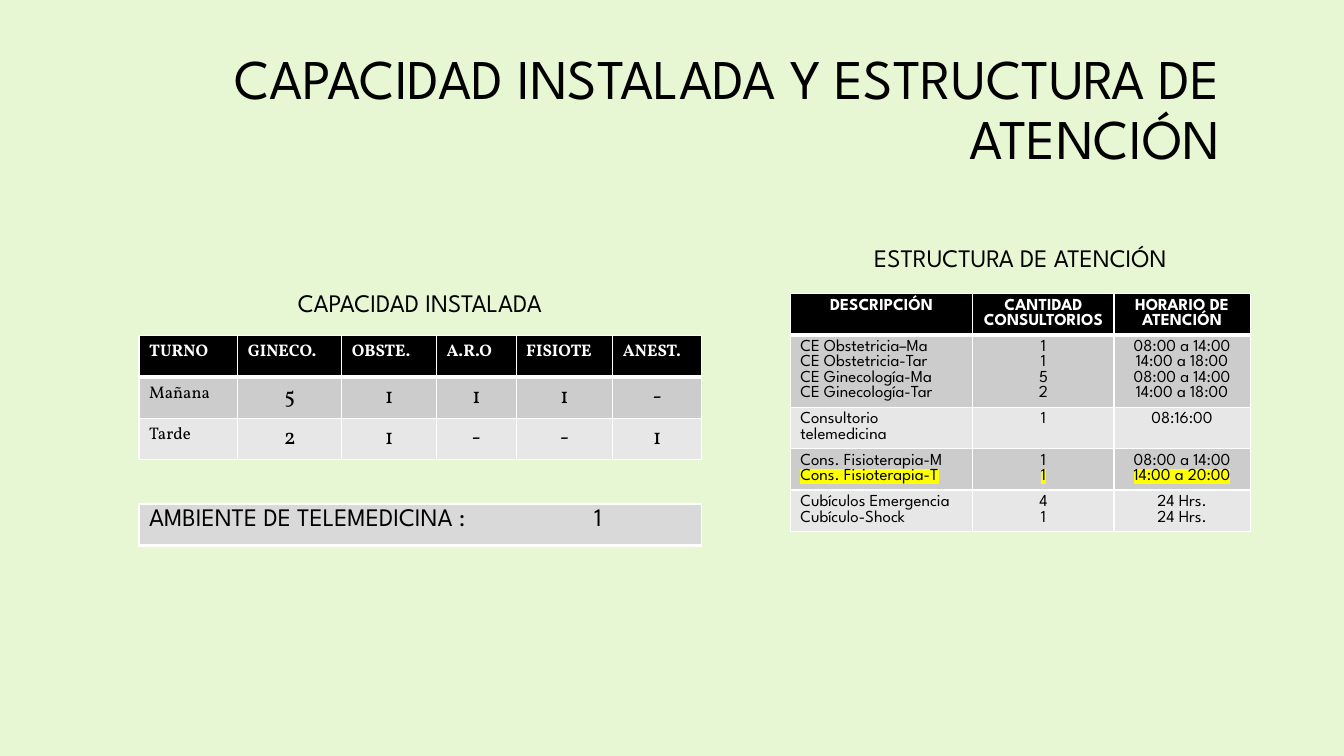
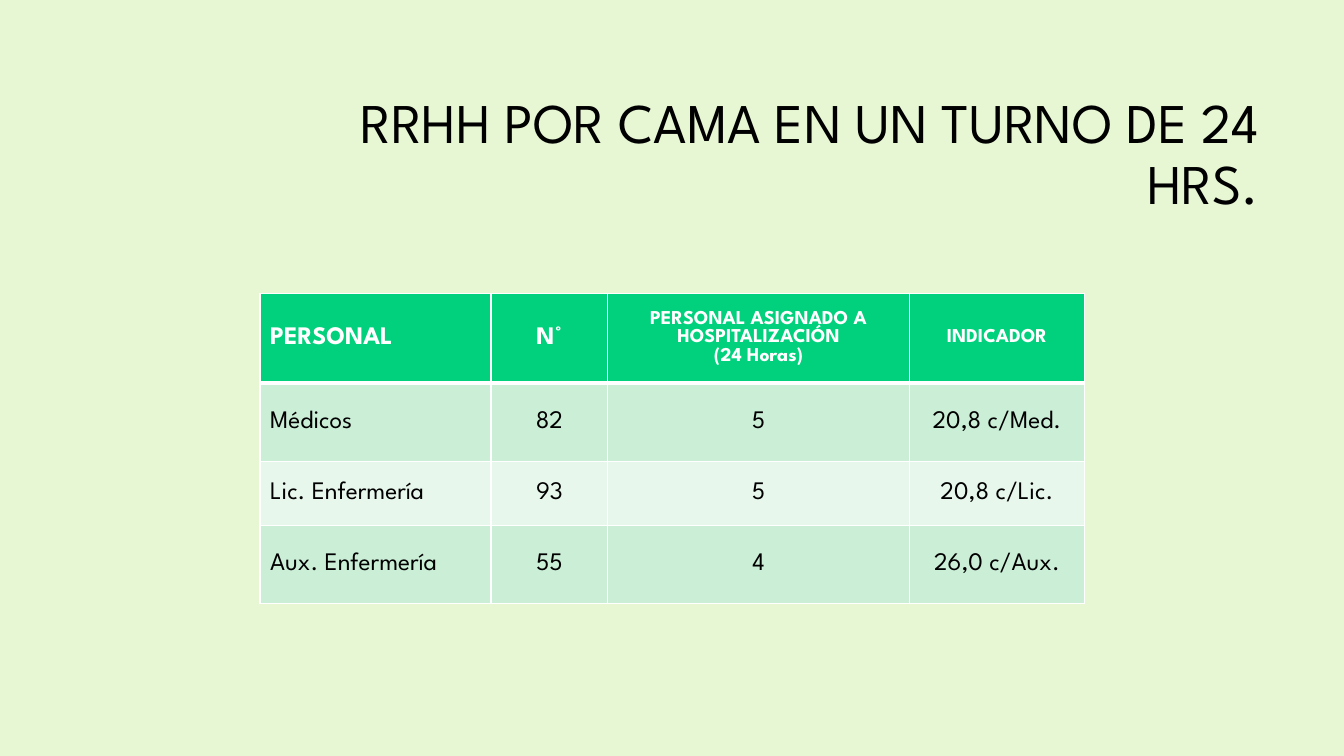
from dataclasses import dataclass
from typing import NamedTuple

from lxml.etree import SubElement
from pptx import Presentation
from pptx.dml.color import RGBColor
from pptx.enum.text import MSO_ANCHOR, MSO_AUTO_SIZE, PP_ALIGN
from pptx.oxml.ns import qn
from pptx.util import Inches, Pt

WIDE, HIGH = Inches(13.33), Inches(7.5)
SANS, SERIF = "League Spartan", "Vollkorn"
PAPER, BLACK, WHITE, GOLD = "E7F6D3", "000000", "FFFFFF", "FFFF00"
GREYS = ("CCCCCC", "E7E7E7")
GREENS = ("CBEED7", "E7F7EC")
ALIGN = {"l": PP_ALIGN.LEFT, "c": PP_ALIGN.CENTER, "r": PP_ALIGN.RIGHT}
ROW = 5.47


class Box(NamedTuple):
    left: float
    top: float
    width: float
    height: float


@dataclass
class Label:
    text: str
    box: Box


@dataclass
class Grid:
    left: float
    top: float
    cols: tuple[float, ...]
    rows: tuple[float, ...]
    cells: list[tuple[str, ...]]
    heads: str
    head: tuple[int, ...]
    body: tuple[int, ...]
    fill: str = BLACK
    ink: str = WHITE
    bands: tuple[str, str] = GREYS
    font: str = SANS
    rule: int = 3
    anchor: MSO_ANCHOR = MSO_ANCHOR.TOP
    mark: tuple[int, int] | None = None
    tab: float = 0


@dataclass
class Page:
    title: str
    box: Box
    labels: list[Label]
    grids: list[Grid]


def hue(code: str) -> RGBColor:
    return RGBColor.from_string(code)


def across(share: float) -> int:
    return round(WIDE * share / 100)


def down(share: float) -> int:
    return round(HIGH * share / 100)


def place(box: Box) -> tuple[int, int, int, int]:
    return across(box.left), down(box.top), across(box.width), down(box.height)


def style(para, size: int, side: str, font: str = SANS, ink: str = BLACK, bold: bool = False) -> None:
    para.alignment = ALIGN[side]
    for run in para.runs:
        run.font.size = Pt(size)
        run.font.name = font
        run.font.bold = bold
        run.font.color.rgb = hue(ink)


def shine(para) -> None:
    for run in para.runs:
        props = run.font._element if hasattr(run.font, "_element") else run._r.get_or_add_rPr()
        glow = SubElement(props, qn("a:highlight"))
        SubElement(glow, qn("a:srgbClr"), val=GOLD)
        props.find(qn("a:solidFill")).addnext(glow)


def edge(cell, top: int, base: int) -> None:
    props = cell._tc.get_or_add_tcPr()
    for side, width in zip("LRTB", (1, 1, top, base)):
        line = SubElement(props, qn(f"a:ln{side}"), w=str(Pt(width)))
        fill = SubElement(line, qn("a:solidFill"))
        SubElement(fill, qn("a:srgbClr"), val=WHITE)


def stop(para, share: float) -> None:
    tabs = SubElement(para._p.get_or_add_pPr(), qn("a:tabLst"))
    SubElement(tabs, qn("a:tab"), pos=str(across(share)), algn="l")


def draw_cell(grid: Grid, cell, row: int, col: int) -> None:
    first = row == 0
    edge(cell, grid.rule if row == 1 else 1, 3 if first else 1)
    cell.fill.solid()
    cell.fill.fore_color.rgb = hue(grid.fill if first else grid.bands[(row - 1) % 2])
    cell.vertical_anchor = grid.anchor
    cell.text_frame.text = grid.cells[row][col]
    size = (grid.head if first else grid.body)[col]
    side = grid.heads[col] if first else "c" if col else "l"
    ink = grid.ink if first else BLACK
    for index, para in enumerate(cell.text_frame.paragraphs):
        if grid.tab:
            stop(para, grid.tab)
        style(para, size, side, grid.font, ink, ink == WHITE)
        if (row, index) == grid.mark:
            shine(para)


def draw_grid(slide, grid: Grid) -> None:
    box = Box(grid.left, grid.top, sum(grid.cols), sum(grid.rows))
    table = slide.shapes.add_table(len(grid.rows), len(grid.cols), *place(box)).table
    table.horz_banding = False
    for col, share in zip(table.columns, grid.cols):
        col.width = across(share)
    for row, share in zip(table.rows, grid.rows):
        row.height = down(share)
    for row in range(len(grid.rows)):
        for col in range(len(grid.cols)):
            draw_cell(grid, table.cell(row, col), row, col)


def draw_label(slide, label: Label) -> None:
    frame = slide.shapes.add_textbox(*place(label.box)).text_frame
    frame.text = label.text
    frame.word_wrap = False
    frame.auto_size = MSO_AUTO_SIZE.SHAPE_TO_FIT_TEXT
    style(frame.paragraphs[0], 18, "c")


def draw_page(deck, page: Page) -> None:
    slide = deck.slides.add_slide(deck.slide_layouts[5])
    title = slide.shapes.title
    title.left, title.top, title.width, title.height = place(page.box)
    frame = title.text_frame
    frame.text = page.title
    frame.word_wrap = True
    frame.auto_size = MSO_AUTO_SIZE.NONE
    frame.vertical_anchor = MSO_ANCHOR.MIDDLE
    para = frame.paragraphs[0]
    para.line_spacing = 0.9
    style(para, 40, "r")
    for grid in page.grids:
        draw_grid(slide, grid)
    for label in page.labels:
        draw_label(slide, label)


SHIFTS = Grid(
    10.35, 44.4, (7.35, 7.73, 7.05, 5.93, 7.2, 6.6), (ROW,) * 3,
    [
        ("TURNO", "GINECO.", "OBSTE.", "A.R.O", "FISIOTE", "ANEST."),
        ("Mañana", "5", "1", "1", "1", "-"),
        ("Tarde", "2", "1", "-", "-", "1"),
    ],
    "l" * 6, (12,) * 6, (12,) + (16,) * 5, font=SERIF, rule=1,
)
REMOTE = Grid(
    10.35, 66.67, (sum(SHIFTS.cols),), (ROW,),
    [("AMBIENTE DE TELEMEDICINA :\t1",)],
    "l", (18,), (18,), fill="D9D9D9", ink=BLACK, tab=33.1,
)
HOURS = Grid(
    58.81, 38.8, (13.58, 10.5, 10.13), (ROW, 9.6, ROW, ROW, ROW),
    [
        ("DESCRIPCIÓN", "CANTIDAD\nCONSULTORIOS", "HORARIO DE ATENCIÓN"),
        (
            "CE Obstetricia–Ma\nCE Obstetricia-Tar\nCE Ginecología-Ma\nCE Ginecología-Tar",
            "1\n1\n5\n2",
            "08:00 a 14:00\n14:00 a 18:00\n08:00 a 14:00\n14:00 a 18:00",
        ),
        ("Consultorio telemedicina", "1", "08:16:00"),
        ("Cons. Fisioterapia-M\nCons. Fisioterapia-T", "1\n1", "08:00 a 14:00\n14:00 a 20:00"),
        ("Cubículos Emergencia\nCubículo-Shock", "4\n1", "24 Hrs.\n24 Hrs."),
    ],
    "ccc", (12,) * 3, (12,) * 3, mark=(3, 1),
)
STAFF = Grid(
    19.35, 38.8, (17.18, 8.7, 22.43, 13.05), (11.87, 10.4, 8.4, 10.4),
    [
        ("PERSONAL", "N°", "PERSONAL ASIGNADO A HOSPITALIZACIÓN\n(24 Horas)", "INDICADOR"),
        ("Médicos", "82", "5", "20,8 c/Med."),
        ("Lic. Enfermería", "93", "5", "20,8 c/Lic."),
        ("Aux. Enfermería", "55", "4", "26,0 c/Aux."),
    ],
    "lccc", (18, 18, 14, 14), (18,) * 4,
    fill="01D17D", bands=GREENS, anchor=MSO_ANCHOR.MIDDLE,
)
PAGES = [
    Page(
        "CAPACIDAD INSTALADA Y ESTRUCTURA DE ATENCIÓN",
        Box(9, 4.13, 82.52, 21.2),
        [
            Label("CAPACIDAD INSTALADA", Box(21.38, 37.33, 19.73, 5.33)),
            Label("ESTRUCTURA DE ATENCIÓN", Box(64.22, 31.33, 23.41, 5.33)),
        ],
        [SHIFTS, HOURS, REMOTE],
    ),
    Page(
        "RRHH POR CAMA EN UN TURNO DE 24 HRS.",
        Box(23.78, 11.2, 70.67, 18.8),
        [],
        [STAFF],
    ),
]


def main() -> None:
    deck = Presentation()
    deck.slide_width, deck.slide_height = WIDE, HIGH
    back = deck.slide_master.background.fill
    back.solid()
    back.fore_color.rgb = hue(PAPER)
    for page in PAGES:
        draw_page(deck, page)
    deck.save("out.pptx")


if __name__ == "__main__":
    main()
